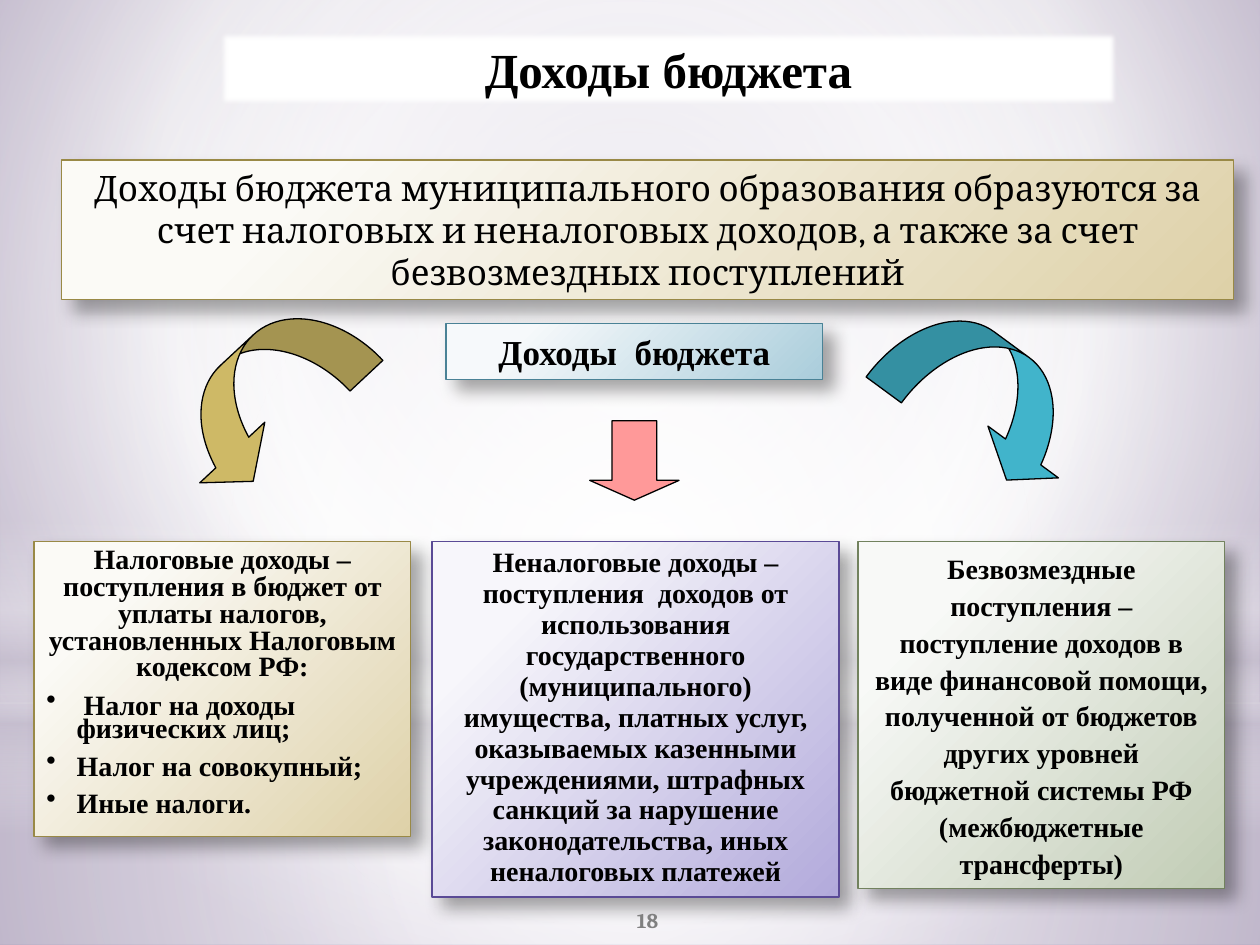
from dataclasses import dataclass
from typing import NamedTuple, Optional

from lxml.etree import SubElement
from pptx import Presentation
from pptx.dml.color import RGBColor
from pptx.enum.shapes import MSO_SHAPE
from pptx.enum.text import MSO_ANCHOR, MSO_AUTO_SIZE, PP_ALIGN
from pptx.oxml.ns import qn
from pptx.util import Inches, Pt


@dataclass(frozen=True)
class Theme:
    serif: str = "Times New Roman"
    reading: str = "Cambria"
    black: str = "000000"
    white: str = "FFFFFF"
    haze: str = "C9C2D1"
    page_number: str = "808080"
    title_size: int = 28
    lead_size: int = 20
    card_size: int = 16
    number_size: int = 12


class Frame(NamedTuple):
    left: float
    top: float
    width: float
    height: float


class Stop(NamedTuple):
    position: int
    color: str
    opacity: int = 100


class Gradient(NamedTuple):
    stops: list[Stop]
    focus: Optional[tuple[int, int, int, int]] = None


class Palette(NamedTuple):
    light: str
    dark: str
    line: str


class Line(NamedTuple):
    text: str
    spacing: float = 1.0
    bullet: bool = False


class Panel(NamedTuple):
    frame: Frame
    palette: Palette
    lines: list[Line]
    size: int
    font: str
    bold: bool = True


class Arrow(NamedTuple):
    kind: MSO_SHAPE
    frame: Frame
    color: str
    adjustments: tuple[float, ...]
    rotation: float = 0


THEME = Theme()
CENTER = (50, 50, 50, 50)
SAND = Palette("FBFAF6", "DED1A8", "998946")
BLUE = Palette("F6F9FB", "AACDDB", "4A8296")
VIOLET = Palette("F7F6FB", "B2AADB", "5A4A96")
GREEN = Palette("F8F9F7", "C1CCB5", "72825E")

BACKGROUND = Gradient([Stop(0, "C1B7CD"), Stop(60, THEME.white), Stop(100, "A191B5")], (20, 10, 20, 60))
OVERLAYS = [
    (MSO_SHAPE.RECTANGLE, Frame(0, 5.58, 10, 1.92), Gradient(
        [Stop(0, THEME.white, 91), Stop(37, THEME.white, 76), Stop(100, THEME.haze, 79)], CENTER)),
    (MSO_SHAPE.RECTANGLE, Frame(0, 0, 10, 5.58), Gradient(
        [Stop(0, THEME.white, 89), Stop(48, THEME.white, 62), Stop(100, THEME.haze, 79)], CENTER)),
    (MSO_SHAPE.RECTANGLE, Frame(0, 4.12, 10, 2.5), Gradient(
        [Stop(0, THEME.white, 0), Stop(29, THEME.white, 30), Stop(45, THEME.haze, 40),
         Stop(55, THEME.white, 26), Stop(65, THEME.haze, 60), Stop(100, THEME.white, 0)])),
    (MSO_SHAPE.OVAL, Frame(0, 1.75, 10, 5.58), Gradient(
        [Stop(0, THEME.white), Stop(56, THEME.white, 0)], CENTER)),
]
PANELS = [
    Panel(Frame(0.49, 1.27, 9.3, 1.11), SAND, [Line(
        "Доходы бюджета муниципального образования образуются за счет налоговых и неналоговых "
        "доходов, а также за счет безвозмездных поступлений")], THEME.lead_size, THEME.reading, False),
    Panel(Frame(3.54, 2.57, 2.99, 0.44), BLUE, [Line("Доходы  бюджета")], THEME.lead_size, THEME.serif),
    Panel(Frame(0.27, 4.3, 2.99, 2.34), SAND, [
        Line("Налоговые доходы – поступления в бюджет от уплаты налогов, установленных "
             "Налоговым кодексом РФ:", 0.8),
        Line(" Налог на доходы физических лиц;", 0.7, True),
        Line("Налог на совокупный;", 0.7, True),
        Line("Иные налоги.", 0.7, True)], THEME.card_size, THEME.serif),
    Panel(Frame(3.43, 4.3, 3.23, 2.82), VIOLET, [Line(
        "Неналоговые доходы – поступления  доходов от использования государственного "
        "(муниципального) имущества, платных услуг, оказываемых казенными учреждениями, "
        "штрафных санкций за нарушение законодательства, иных неналоговых платежей", 0.92)],
        THEME.card_size, THEME.serif),
    Panel(Frame(6.81, 4.3, 2.91, 2.75), GREEN, [Line(
        "Безвозмездные поступления – поступление доходов в виде финансовой помощи, полученной "
        "от бюджетов других уровней бюджетной системы РФ (межбюджетные трансферты)", 1.1)],
        THEME.card_size, THEME.serif),
]
ARROWS = [
    Arrow(MSO_SHAPE.DOWN_ARROW, Frame(4.68, 3.34, 0.71, 0.63), "FF9999", (0.5, 0.25)),
    Arrow(MSO_SHAPE.CURVED_RIGHT_ARROW, Frame(1.68, 2.27, 0.85, 1.76), "CEB966", (0.42, 0.83, 0.33), 47),
    Arrow(MSO_SHAPE.CURVED_LEFT_ARROW, Frame(7.39, 2.28, 0.89, 1.73), "41B4CB", (0.39, 0.78, 0.29), 306.3),
]


def rgb(color: str) -> RGBColor:
    return RGBColor.from_string(color)


def place(frame: Frame) -> list[int]:
    return [Inches(length) for length in frame]


def add_color(parent, color: str, opacity: int) -> None:
    node = SubElement(parent, qn("a:srgbClr"), val=color)
    if opacity < 100:
        SubElement(node, qn("a:alpha"), val=str(opacity * 1000))


def apply_gradient(fill, properties, gradient: Gradient) -> None:
    fill.solid()
    node = properties.find(qn("a:solidFill"))
    node.clear()
    node.tag = qn("a:gradFill")
    node.set("rotWithShape", "1")
    stops = SubElement(node, qn("a:gsLst"))
    for stop in gradient.stops:
        add_color(SubElement(stops, qn("a:gs"), pos=str(stop.position * 1000)), stop.color, stop.opacity)
    if gradient.focus is None:
        SubElement(node, qn("a:lin"), ang="5400000", scaled="0")
    else:
        circle = SubElement(node, qn("a:path"), path="circle")
        edges = {side: str(value * 1000) for side, value in zip("ltrb", gradient.focus)}
        SubElement(circle, qn("a:fillToRect"), **edges)


def add_shadow(shape) -> None:
    effects = shape.element.spPr.find(qn("a:effectLst"))
    shadow = SubElement(effects, qn("a:outerShdw"), blurRad=str(Pt(10.2)), dist=str(Pt(8)),
                        dir="2700000", algn="tl", rotWithShape="0")
    add_color(shadow, THEME.black, 35)


def write_text(para, text: str, *, size: int, font: str, color: str = THEME.black,
               bold: bool = True, spacing: float = 1.0, align=PP_ALIGN.CENTER) -> None:
    para.alignment = align
    para.line_spacing = spacing
    span = para.add_run()
    span.text = text
    span.font.size = Pt(size)
    span.font.name = font
    span.font.bold = bold
    span.font.color.rgb = rgb(color)


def add_bullet(para) -> None:
    properties = para._p.get_or_add_pPr()
    properties.set("marL", str(Inches(0.24)))
    properties.set("indent", str(-Inches(0.24)))
    SubElement(properties, qn("a:buChar"), char="•")


def add_plain_shape(page, kind: MSO_SHAPE, frame: Frame, line: Optional[str] = None):
    shape = page.shapes.add_shape(kind, *place(frame))
    shape.shadow.inherit = False
    if line is None:
        shape.line.fill.background()
    else:
        shape.line.color.rgb = rgb(line)
        shape.line.width = Pt(0.75)
    return shape


def add_panel(page, panel: Panel) -> None:
    light, dark, line = panel.palette
    box = add_plain_shape(page, MSO_SHAPE.RECTANGLE, panel.frame, line)
    apply_gradient(box.fill, box.element.spPr,
                   Gradient([Stop(20, light), Stop(100, dark)], (-15, -15, 115, 115)))
    add_shadow(box)
    frame = box.text_frame
    frame.word_wrap = True
    frame.auto_size = MSO_AUTO_SIZE.SHAPE_TO_FIT_TEXT
    frame.vertical_anchor = MSO_ANCHOR.TOP
    for index, line in enumerate(panel.lines):
        para = frame.add_paragraph() if index else frame.paragraphs[0]
        write_text(para, line.text, size=panel.size, font=panel.font, bold=panel.bold,
                   spacing=line.spacing, align=PP_ALIGN.LEFT if line.bullet else PP_ALIGN.CENTER)
        if line.bullet:
            para.space_before = Pt(8)
            add_bullet(para)


def add_arrow(page, arrow: Arrow) -> None:
    shape = add_plain_shape(page, arrow.kind, arrow.frame, THEME.black)
    shape.fill.solid()
    shape.fill.fore_color.rgb = rgb(arrow.color)
    shape.rotation = arrow.rotation
    for index, value in enumerate(arrow.adjustments):
        shape.adjustments[index] = value


def format_title(page) -> None:
    title = page.shapes.title
    title.left, title.top, title.width, title.height = place(Frame(1.75, 0.26, 7.11, 0.57))
    title.fill.solid()
    title.fill.fore_color.rgb = rgb(THEME.white)
    title.shadow.inherit = False
    SubElement(title.element.spPr.find(qn("a:effectLst")), qn("a:softEdge"), rad=str(Pt(2.5)))
    title.text_frame.word_wrap = True
    title.text_frame.auto_size = MSO_AUTO_SIZE.NONE
    title.text_frame.vertical_anchor = MSO_ANCHOR.TOP
    write_text(title.text_frame.paragraphs[0], "Доходы бюджета", size=THEME.title_size, font=THEME.serif)
    title.element.getparent().append(title.element)


def add_page_number(page) -> None:
    box = page.shapes.add_textbox(*place(Frame(4.14, 7.1, 2, 0.4)))
    box.text_frame.word_wrap = True
    box.text_frame.vertical_anchor = MSO_ANCHOR.MIDDLE
    write_text(box.text_frame.paragraphs[0], "18", size=THEME.number_size, font=THEME.reading,
               color=THEME.page_number)


def main() -> None:
    deck = Presentation()
    deck.slide_width, deck.slide_height = Inches(10), Inches(7.5)
    page = deck.slides.add_slide(deck.slide_layouts[5])
    fill = page.background.fill
    apply_gradient(fill, page.element.find(".//" + qn("p:bgPr")), BACKGROUND)
    for kind, frame, gradient in OVERLAYS:
        overlay = add_plain_shape(page, kind, frame)
        apply_gradient(overlay.fill, overlay.element.spPr, gradient)
    format_title(page)
    for panel in PANELS:
        add_panel(page, panel)
    for arrow in ARROWS:
        add_arrow(page, arrow)
    add_page_number(page)
    deck.save("out.pptx")


if __name__ == "__main__":
    main()
